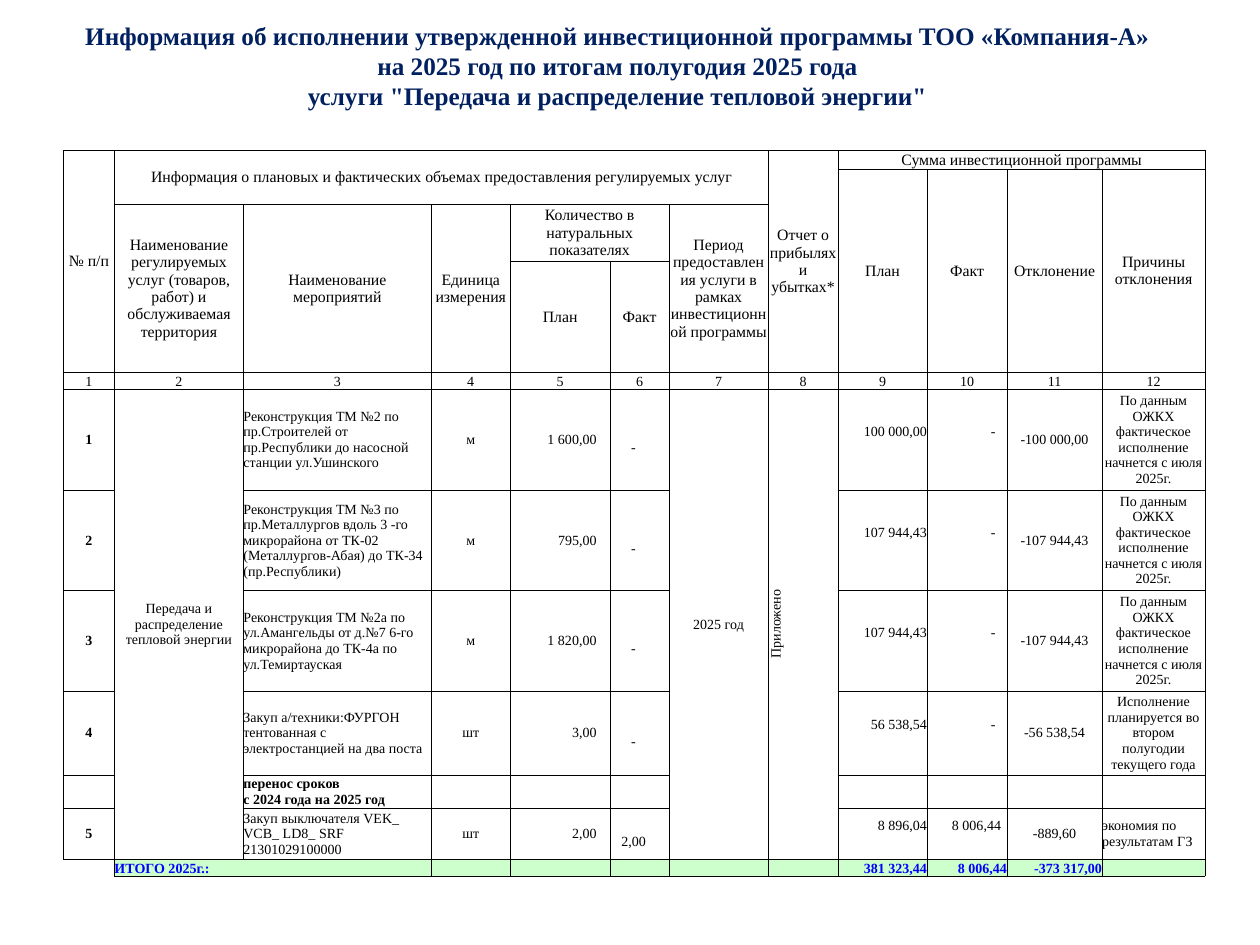
from lxml import etree
from pptx import Presentation
from pptx.dml.color import RGBColor
from pptx.enum.text import MSO_ANCHOR, PP_ALIGN
from pptx.oxml.ns import qn
from pptx.util import Pt

LEFT, CENTER, RIGHT = PP_ALIGN.LEFT, PP_ALIGN.CENTER, PP_ALIGN.RIGHT
MIDDLE, BOTTOM = MSO_ANCHOR.MIDDLE, MSO_ANCHOR.BOTTOM
FONT = "Times New Roman"
COLORS = {"title": "002060", "text": "000000", "total": "0000FF", "total_fill": "CCFFCC"}


def write(cell, text, size=8, align=CENTER, anchor=MIDDLE, bold=False, color="text",
          right=0, top=0, bottom=0):
    cell.text = text
    cell.vertical_anchor = anchor
    cell.margin_right, cell.margin_top, cell.margin_bottom = Pt(right), Pt(top), Pt(bottom)
    for paragraph in cell.text_frame.paragraphs:
        paragraph.alignment = align
        paragraph.font.name = FONT
        paragraph.font.size = Pt(size)
        paragraph.font.bold = bold
        paragraph.font.color.rgb = RGBColor.from_string(COLORS[color])


def set_borders(cell, visible):
    properties = cell._tc.get_or_add_tcPr()
    for position, side in enumerate("LRTB"):
        line = etree.Element(qn("a:ln" + side), w=str(Pt(0.5)))
        if side in visible:
            fill = etree.SubElement(line, qn("a:solidFill"))
            etree.SubElement(fill, qn("a:srgbClr"), val=COLORS["text"])
        else:
            etree.SubElement(line, qn("a:noFill"))
        properties.insert(position, line)


prs = Presentation()
prs.slide_width, prs.slide_height = Pt(720), Pt(540)
slide = prs.slides.add_slide(prs.slide_layouts[6])

# Title
title = slide.shapes.add_textbox(Pt(20), Pt(3.6), Pt(665.5), Pt(67.7)).text_frame
title.word_wrap = True
title.vertical_anchor = MIDDLE
title.text = ("Информация об исполнении утвержденной инвестиционной программы ТОО «Компания-А»\v"
              "на 2025 год по итогам полугодия 2025 года\v"
              "услуги \"Передача и распределение тепловой энергии\"")
heading = title.paragraphs[0]
heading.alignment = CENTER
heading.font.name = FONT
heading.font.size = Pt(14.4)
heading.font.bold = True
heading.font.color.rgb = RGBColor.from_string(COLORS["title"])

# Table grid
widths = [29.2, 73.7, 107.4, 45.1, 57.1, 33.7, 56.6, 40, 50.9, 45.7, 54.3, 58.9]
heights = [10.3, 20, 30.3, 63.4, 9.7, 53.4, 53.7, 53.7, 44.6, 18.3, 26.9, 9.7]
table = slide.shapes.add_table(len(heights), len(widths), Pt(36.2), Pt(86),
                               Pt(sum(widths)), Pt(sum(heights))).table
table.first_row = table.horz_banding = False
for column, width in zip(table.columns, widths):
    column.width = Pt(width)
for row, height in zip(table.rows, heights):
    row.height = Pt(height)

# Cell margins, fills and borders
TOTAL_ROW = len(heights) - 1
total_borders = {0: "RT", 1: "LTB", 2: "RTB"}
for r in range(len(heights)):
    for c in range(len(widths)):
        cell = table.cell(r, c)
        cell.margin_left = cell.margin_right = cell.margin_top = cell.margin_bottom = 0
        end = etree.SubElement(cell.text_frame.paragraphs[0]._p, qn("a:endParaRPr"))
        end.set("sz", "800")
        if r == TOTAL_ROW and c > 0:
            cell.fill.solid()
            cell.fill.fore_color.rgb = RGBColor.from_string(COLORS["total_fill"])
        else:
            cell.fill.background()
        set_borders(cell, total_borders.get(c, "LRTB") if r == TOTAL_ROW else "LRTB")

# Header: row, column, rows spanned, columns spanned, text
headers = [
    (0, 0, 4, 1, "№ п/п"),
    (0, 1, 2, 6, "Информация о плановых и фактических объемах предоставления регулируемых услуг"),
    (0, 7, 4, 1, "Отчет о прибылях и убытках*"),
    (0, 8, 1, 4, "Сумма инвестиционной программы"),
    (1, 8, 3, 1, "План"),
    (1, 9, 3, 1, "Факт"),
    (1, 10, 3, 1, "Отклонение"),
    (1, 11, 3, 1, "Причины отклонения"),
    (2, 1, 2, 1, "Наименование регулируемых услуг (товаров, работ) и обслуживаемая территория"),
    (2, 2, 2, 1, "Наименование мероприятий"),
    (2, 3, 2, 1, "Единица измерения"),
    (2, 4, 1, 2, "Количество в натуральных показателях"),
    (2, 6, 2, 1, "Период предоставления услуги в рамках инвестиционной программы"),
    (3, 4, 1, 1, "План"),
    (3, 5, 1, 1, "Факт"),
]
for r, c, row_span, col_span, text in headers:
    if row_span * col_span > 1:
        table.cell(r, c).merge(table.cell(r + row_span - 1, c + col_span - 1))
    write(table.cell(r, c), text, size=9)

# Column numbers
for c in range(len(widths)):
    write(table.cell(4, c), str(c + 1), anchor=BOTTOM)

# Cells shared by all measures
for c, text in [(1, "Передача и распределение тепловой энергии"), (6, "2025 год"), (7, "Приложено")]:
    table.cell(5, c).merge(table.cell(10, c))
    write(table.cell(5, c), text)
table.cell(5, 7)._tc.get_or_add_tcPr().set("vert", "vert270")

# Measures: row, number, name, unit, planned and actual quantity,
# planned and actual sum, deviation, reason
july_start = "По данным ОЖКХ фактическое исполнение начнется с июля 2025г."
measures = [
    (5, "1", "Реконструкция ТМ №2 по пр.Строителей от пр.Республики до насосной станции ул.Ушинского",
     "м", "1 600,00", "-", "100 000,00", "-", "-100 000,00", july_start),
    (6, "2", "Реконструкция ТМ №3 по пр.Металлургов вдоль 3 -го микрорайона от ТК-02 "
     "(Металлургов-Абая) до ТК-34 (пр.Республики)",
     "м", "795,00", "-", "107 944,43", "-", "-107 944,43", july_start),
    (7, "3", "Реконструкция ТМ №2а по ул.Амангельды от д.№7 6-го микрорайона до ТК-4а "
     "по ул.Темиртауская",
     "м", "1 820,00", "-", "107 944,43", "-", "-107 944,43", july_start),
    (8, "4", "Закуп а/техники:ФУРГОН тентованная с электростанцией на два поста",
     "шт", "3,00", "-", "56 538,54", "-", "-56 538,54",
     "Исполнение планируется во втором полугодии текущего года"),
    (10, "5", "Закуп выключателя VEK_ VCB_ LD8_ SRF 21301029100000",
     "шт", "2,00", "2,00", "8 896,04", "8 006,44", "-889,60", "экономия по результатам ГЗ"),
]
for r, number, name, unit, plan_qty, fact_qty, plan_sum, fact_sum, deviation, reason in measures:
    write(table.cell(r, 0), number, bold=True)
    write(table.cell(r, 2), name, align=LEFT)
    write(table.cell(r, 3), unit)
    write(table.cell(r, 4), plan_qty, align=RIGHT, right=7.7)
    write(table.cell(r, 5), fact_qty, right=6.9, top=9.2)
    write(table.cell(r, 8), plan_sum, align=RIGHT, bottom=9.2)
    write(table.cell(r, 9), fact_sum, align=RIGHT, right=6.6 if fact_sum == "-" else 3.4, bottom=9.2)
    write(table.cell(r, 10), deviation)
    write(table.cell(r, 11), reason, align=LEFT if r == 10 else CENTER)
write(table.cell(9, 2), "перенос сроков\nс 2024 года на 2025 год", align=LEFT, bold=True)

# Totals
totals = [(1, "ИТОГО 2025г.:", LEFT), (8, "381 323,44", RIGHT),
          (9, "8 006,44", RIGHT), (10, "-373 317,00", RIGHT)]
for c, text, align in totals:
    write(table.cell(TOTAL_ROW, c), text, align=align, anchor=BOTTOM, bold=True, color="total")

prs.save("out.pptx")
